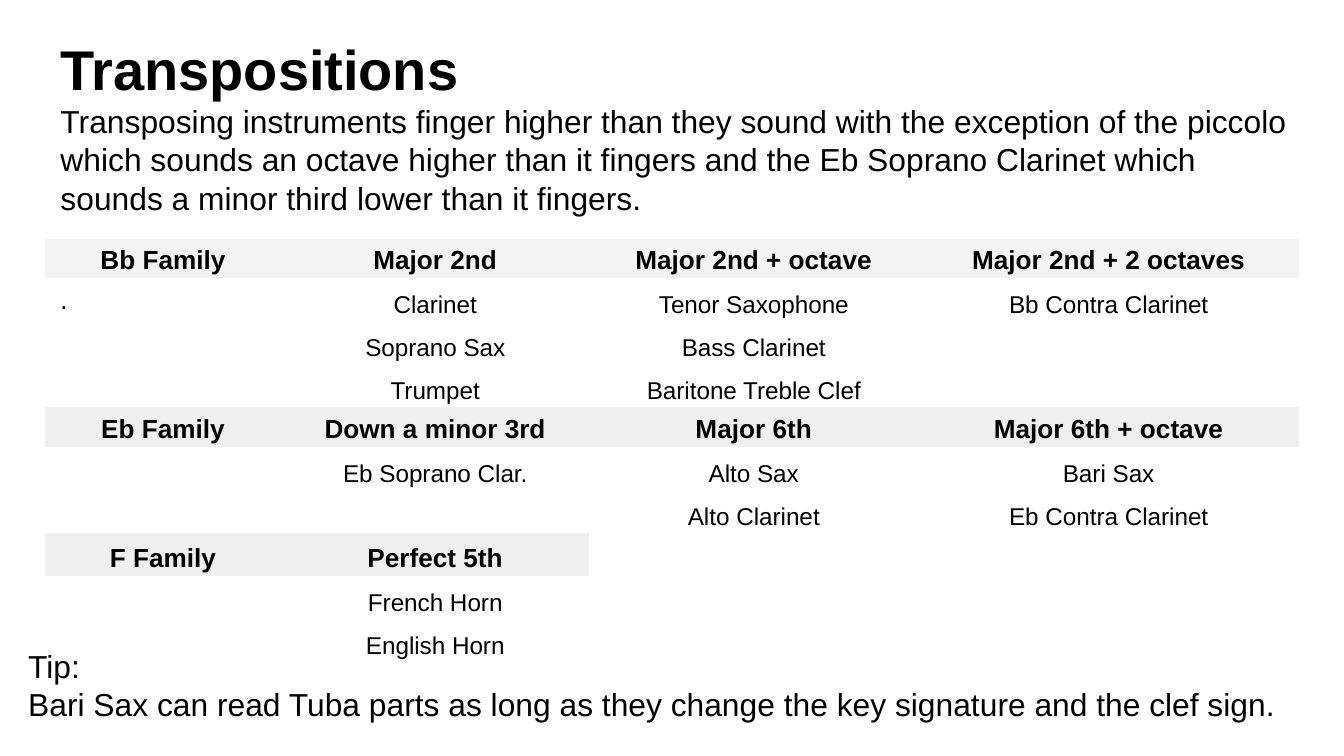
from dataclasses import dataclass

from lxml.etree import SubElement
from pptx import Presentation
from pptx.dml.color import RGBColor as Color
from pptx.enum.text import MSO_ANCHOR as Anchor, MSO_AUTO_SIZE as AutoSize, PP_ALIGN as Align
from pptx.oxml.ns import qn
from pptx.util import Pt


@dataclass(frozen=True)
class Theme:
    """Colours, font and type sizes of the slide."""
    font: str = "Arial"
    ink: Color = Color(0, 0, 0)
    first_band: Color = Color(0xF3, 0xF3, 0xF3)
    band: Color = Color(0xEF, 0xEF, 0xEF)
    title: float = 30
    body: float = 17
    heading: float = 14
    entry: float = 13


THEME = Theme()
NO_GRID_STYLE = "{2D5ABB26-0587-4C30-8999-92F81FD0307C}"
COLUMN_WIDTHS = (126.7, 164.9, 176.4, 203.8)
FAMILIES = (
    (("Bb Family", "Major 2nd", "Major 2nd + octave", "Major 2nd + 2 octaves"),
     ("", "Clarinet", "Tenor Saxophone", "Bb Contra Clarinet"),
     ("", "Soprano Sax", "Bass Clarinet", ""),
     ("", "Trumpet", "Baritone Treble Clef", "")),
    (("Eb Family", "Down a minor 3rd", "Major 6th", "Major 6th + octave"),
     ("", "Eb Soprano Clar.", "Alto Sax", "Bari Sax"),
     ("", "", "Alto Clarinet", "Eb Contra Clarinet")),
    (("F Family", "Perfect 5th", "", ""),
     ("", "French Horn", "", ""),
     ("", "English Horn", "", "")),
)
INTRO = ("Transposing instruments finger higher than they sound with the exception of "
         "the piccolo which sounds an octave higher than it fingers and the Eb Soprano "
         "Clarinet which sounds a minor third lower than it fingers.")
TIP = "Bari Sax can read Tuba parts as long as they change the key signature and the clef sign."


def add_span(para, text, size, bold=False):
    """Add one formatted run to a paragraph."""
    span = para.add_run()
    span.text = text
    span.font.name = THEME.font
    span.font.size = Pt(size)
    span.font.bold = bold
    span.font.color.rgb = THEME.ink


def fill_placeholder(box, place, anchor, lines):
    """Move a placeholder and write (text, size, bold, space before) lines into it."""
    box.left, box.top, box.width, box.height = (Pt(length) for length in place)
    frame = box.text_frame
    frame.word_wrap = True
    frame.auto_size = AutoSize.NONE
    frame.vertical_anchor = anchor
    frame.margin_left = frame.margin_right = Pt(7.2)
    frame.margin_top = frame.margin_bottom = Pt(7.2)
    for index, (text, size, bold, gap) in enumerate(lines):
        para = frame.add_paragraph() if index else frame.paragraphs[0]
        para.alignment = Align.LEFT
        para.space_before = Pt(gap)
        properties = para._p.get_or_add_pPr()
        properties.set("marL", "0")
        properties.set("indent", "0")
        SubElement(properties, qn("a:buNone"))
        add_span(para, text, size, bold)


def fill_cell(cell, text, heading, band):
    """Write one table cell, banded when it heads a family."""
    cell.vertical_anchor = Anchor.BOTTOM
    cell.margin_left = cell.margin_right = Pt(2.2)
    cell.margin_top = cell.margin_bottom = Pt(1.4 if text else 0)
    if not text:
        cell.fill.background()
        return
    if heading:
        cell.fill.solid()
        cell.fill.fore_color.rgb = band
    else:
        cell.fill.background()
    para = cell.text_frame.paragraphs[0]
    para.alignment = Align.CENTER
    para.line_spacing = 1.15
    add_span(para, text, THEME.heading if heading else THEME.entry, heading)


def add_family_table(page):
    """Add the table of instrument families, each led by a heading row."""
    rows = [(row, index == 0, THEME.band if number else THEME.first_band)
            for number, family in enumerate(FAMILIES)
            for index, row in enumerate(family)]
    heights = [21.2 if heading and all(row) else 23.1 for row, heading, _ in rows]
    frame = page.shapes.add_table(len(rows), len(COLUMN_WIDTHS), Pt(24), Pt(127.8),
                                  Pt(sum(COLUMN_WIDTHS)), Pt(sum(heights)))
    table = frame.table
    table.first_row = table.horz_banding = False
    table._tbl.tblPr.find(qn("a:tableStyleId")).text = NO_GRID_STYLE
    for column, width in zip(table.columns, COLUMN_WIDTHS):
        column.width = Pt(width)
    for line, height, (row, heading, band) in zip(table.rows, heights, rows):
        line.height = Pt(height)
        for cell, text in zip(line.cells, row):
            fill_cell(cell, text, heading, band)


def main():
    """Build the transpositions slide and save it."""
    deck = Presentation()
    deck.slide_width, deck.slide_height = Pt(720), Pt(405)
    page = deck.slides.add_slide(deck.slide_layouts[1])
    title, tip = page.placeholders
    fill_placeholder(title, (25.2, 11.5, 679.7, 115.9), Anchor.TOP, (
        ("Transpositions", THEME.title, True, 0),
        (INTRO, THEME.body, False, 0),
        (".", THEME.heading, False, 36)))
    fill_placeholder(tip, (7.9, 337.7, 697, 58.3), Anchor.MIDDLE, (
        ("Tip:", THEME.body, False, 0),
        (TIP, THEME.body, False, 0)))
    add_family_table(page)
    deck.save("out.pptx")


if __name__ == "__main__":
    main()
